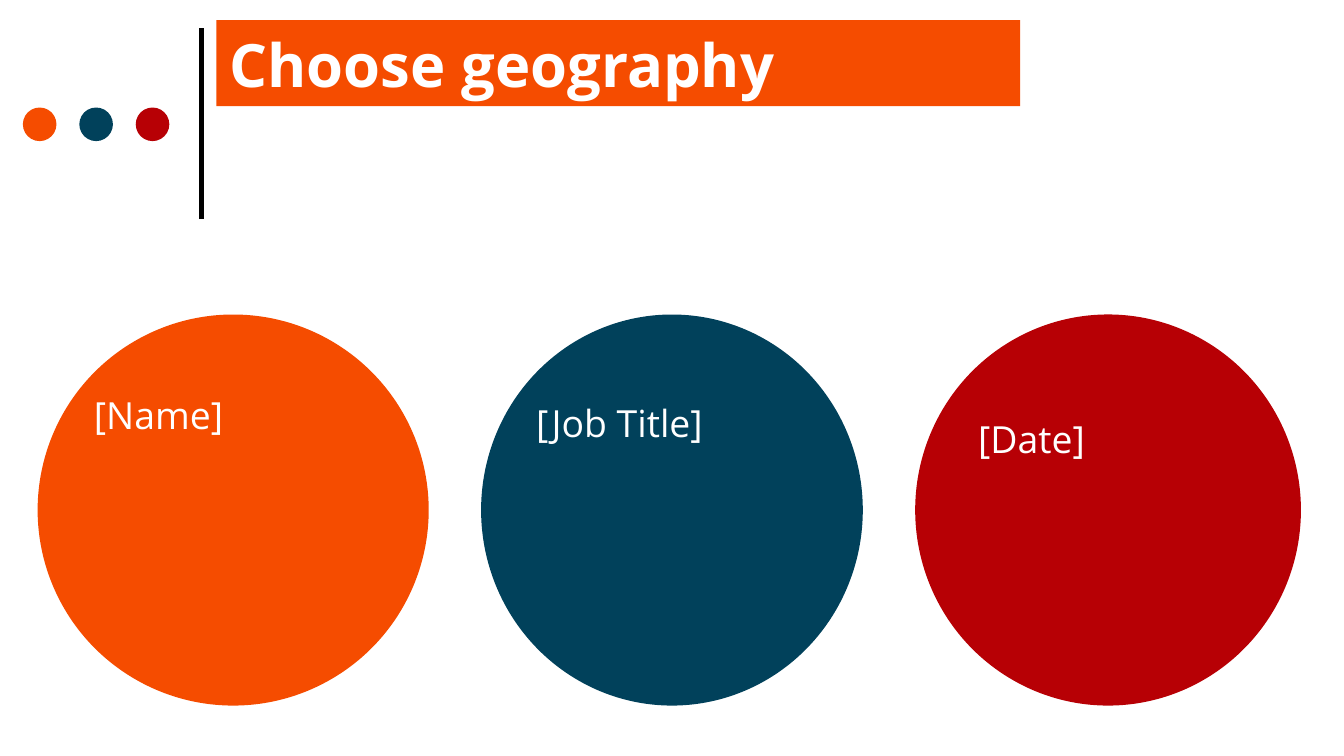
"""Build the "Choose geography" slide with three coloured circles."""
from lxml import etree
from pptx import Presentation
from pptx.dml.color import RGBColor
from pptx.enum.shapes import MSO_CONNECTOR, MSO_SHAPE
from pptx.enum.text import MSO_ANCHOR, PP_ALIGN
from pptx.oxml.ns import qn
from pptx.util import Inches, Pt

STRAIGHT = MSO_CONNECTOR.STRAIGHT
OVAL, RECTANGLE = MSO_SHAPE.OVAL, MSO_SHAPE.RECTANGLE
MIDDLE, TOP = MSO_ANCHOR.MIDDLE, MSO_ANCHOR.TOP
LEFT = PP_ALIGN.LEFT

ORANGE = RGBColor(0xF5, 0x4C, 0x00)
NAVY = RGBColor(0x01, 0x41, 0x5B)
RED = RGBColor(0xB7, 0x00, 0x05)
BLACK = RGBColor(0x00, 0x00, 0x00)
WHITE = RGBColor(0xFF, 0xFF, 0xFF)
FONT = "Open Sans"


def add_filled(kind, x, y, w, h, color):
    sp = s.shapes.add_shape(kind, Inches(x), Inches(y), Inches(w), Inches(h))
    sp.shadow.inherit = False
    sp.fill.solid()
    sp.fill.fore_color.rgb = color
    sp.line.fill.background()
    return sp


def set_text(sp, text, size, anchor, bold=False):
    tf = sp.text_frame
    tf.word_wrap = True
    tf.vertical_anchor = anchor
    p = tf.paragraphs[0]
    p.text = text
    p.alignment = LEFT
    p.font.name = FONT
    p.font.size = Pt(size)
    p.font.bold = bold
    p.font.color.rgb = WHITE


prs = Presentation()
prs.slide_width = Inches(10)
prs.slide_height = Inches(10) * 9 // 16
s = prs.slides.add_slide(prs.slide_layouts[6])

rule = s.shapes.add_connector(STRAIGHT, Inches(1.5), Inches(1.63), Inches(1.5), Inches(0.21))
rule.line.color.rgb = BLACK
rule.line.width = Pt(3)
etree.SubElement(rule._element.spPr, qn("a:effectLst"))

for i, color in enumerate((ORANGE, NAVY, RED)):
    add_filled(OVAL, 0.17 + 0.42 * i, 0.8, 0.25, 0.25, color)

title = add_filled(RECTANGLE, 1.61, 0.15, 5.98, 0.64, ORANGE)
set_text(title, "Choose geography", 32, MIDDLE, bold=True)

for x, w, color in ((0.28, 2.91, ORANGE), (3.58, 2.84, NAVY), (6.81, 2.87, RED)):
    add_filled(OVAL, x, 2.34, w, 2.91, color)

labels = (
    ("[Name]", 0.6, 2.87, 2.84, 0.77),
    ("[Job Title]", 3.89, 2.93, 2.44, 0.44),
    ("[Date]", 7.18, 3.05, 2.36, 0.44),
)
for text, x, y, w, h in labels:
    sp = s.shapes.add_textbox(Inches(x), Inches(y), Inches(w), Inches(h))
    set_text(sp, text, 20, TOP)

prs.save("out.pptx")
